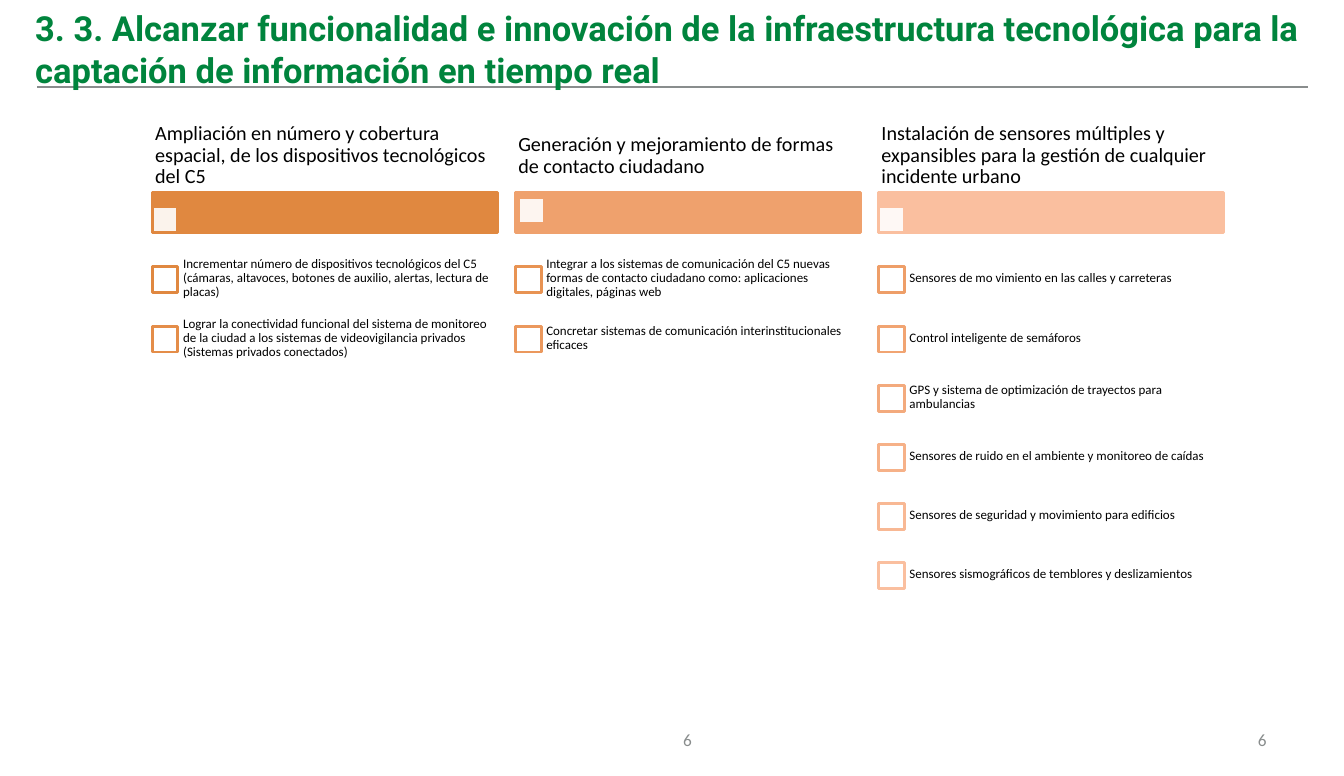
"""Build the slide on the C5 technology infrastructure goals."""
from dataclasses import dataclass

import pptx
import pptx.dml.color
import pptx.enum.shapes
import pptx.enum.text
import pptx.oxml.ns
import pptx.util
from lxml import etree
from pptx.util import Inches


@dataclass(frozen=True)
class Theme:
    """Colours, fonts and type sizes."""
    green: str = "00843D"
    gray: str = "898D8D"
    black: str = "000000"
    white: str = "FFFFFF"
    title_font: str = "Roboto"
    body_font: str = "Calibri"
    title_size: int = 24
    heading_size: int = 14
    item_size: int = 9
    number_size: int = 12


theme = Theme()
ALIGN = pptx.enum.text.PP_ALIGN
ANCHOR = pptx.enum.text.MSO_ANCHOR


def add_text(text, place, size, color=theme.black, font=theme.body_font, bold=False,
             align=ALIGN.LEFT, anchor=ANCHOR.MIDDLE, insets=(0.1, 0.05), spacing=1.0):
    box = slide.shapes.add_textbox(*map(Inches, place))
    frame = box.text_frame
    frame.word_wrap = True
    frame.vertical_anchor = anchor
    frame.margin_left = frame.margin_right = Inches(insets[0])
    frame.margin_top = frame.margin_bottom = Inches(insets[1])
    frame.text = text
    para = frame.paragraphs[0]
    para.alignment = align
    para.line_spacing = spacing
    span = para.runs[0]
    span.font.name = font
    span.font.size = pptx.util.Pt(size)
    span.font.bold = bold
    span.font.color.rgb = pptx.dml.color.RGBColor.from_string(color)


def add_rectangle(place, fill, line, opacity=100):
    shape = slide.shapes.add_shape(pptx.enum.shapes.MSO_SHAPE.RECTANGLE, *map(Inches, place))
    shape.shadow.inherit = False
    shape.fill.solid()
    shape.fill.fore_color.rgb = pptx.dml.color.RGBColor.from_string(fill)
    shape.line.color.rgb = pptx.dml.color.RGBColor.from_string(line)
    shape.line.width = pptx.util.Pt(2)
    if opacity < 100:
        color = shape.fill._xPr.find(".//" + pptx.oxml.ns.qn("a:srgbClr"))
        etree.SubElement(color, pptx.oxml.ns.qn("a:alpha"), val=str(opacity * 1000))


deck = pptx.Presentation()
deck.slide_width, deck.slide_height = Inches(12.99), Inches(7.5)
slide = deck.slides.add_slide(deck.slide_layouts[6])

rule = slide.shapes.add_connector(pptx.enum.shapes.MSO_CONNECTOR.STRAIGHT,
                                  Inches(0.36), Inches(0.84), Inches(12.64), Inches(0.84))
rule.line.color.rgb = pptx.dml.color.RGBColor.from_string(theme.gray)
rule.line.width = pptx.util.Pt(1.5)
etree.SubElement(rule._element.spPr, pptx.oxml.ns.qn("a:effectLst"))

add_text("3. 3. Alcanzar funcionalidad e innovación de la infraestructura tecnológica para la "
         "captación de información en tiempo real", (0.21, 0, 12.78, 0.94), theme.title_size,
         theme.green, theme.title_font, bold=True, anchor=ANCHOR.TOP, insets=(0.13, 0.07))

for place, align in (((9.31, 6.95, 3.03, 0.4), ALIGN.RIGHT),
                     ((5.09, 6.95, 3.11, 0.4), ALIGN.CENTER)):
    add_text("6", place, theme.number_size, theme.gray, align=align)

columns = [
    ("Ampliación en número y cobertura espacial, de los dispositivos tecnológicos del C5",
     "E08840", (0, 2), [
         ("E08840", "Incrementar número de dispositivos tecnológicos del C5 (cámaras, altavoces, "
                    "botones de auxilio, alertas, lectura de placas)"),
         ("E48D49", "Lograr la conectividad funcional del sistema de monitoreo de la ciudad a los "
                    "sistemas de videovigilancia privados (Sistemas privados conectados)"),
     ]),
    ("Generación y mejoramiento de formas de contacto ciudadano",
     "EFA16D", (0.03, 1.91), [
         ("E89353", "Integrar a los sistemas de comunicación del C5 nuevas formas de contacto "
                    "ciudadano como: aplicaciones digitales, páginas web"),
         ("EB985D", "Concretar sistemas de comunicación interinstitucionales eficaces"),
     ]),
    ("Instalación de sensores múltiples y expansibles para la gestión de cualquier incidente "
     "urbano", "FABF9F", (0, 2), [
         ("EE9E68", "Sensores de mo vimiento en las calles y carreteras"),
         ("F1A472", "Control inteligente de semáforos"),
         ("F3AA7D", "GPS y sistema de optimización de trayectos para ambulancias"),
         ("F6B188", "Sensores de ruido en el ambiente y monitoreo de caídas"),
         ("F8B894", "Sensores de seguridad y movimiento para edificios"),
         ("FABF9F", "Sensores sismográficos de temblores y deslizamientos"),
     ]),
]
column_pitch, column_width, row_pitch, square = 3.51, 3.34, 0.572, 0.25

for column, (heading, bar_color, (marker_shift, marker_top), items) in enumerate(columns):
    left = 1.47 + column * column_pitch
    add_rectangle((left, 1.86, column_width, 0.39), bar_color, bar_color)
    add_rectangle((left + marker_shift, marker_top, square, square),
                  theme.white, bar_color, opacity=90)
    add_text(heading, (left, 1.15, column_width, 0.71), theme.heading_size,
             insets=(0.03, 0.02), spacing=0.9)
    for row, (line_color, item) in enumerate(items):
        top = 2.41 + row * row_pitch
        add_rectangle((left, top + 0.17, square, square), theme.white, line_color)
        add_text(item, (left + 0.23, top, 3.11, 0.57), theme.item_size,
                 insets=(0.07, 0.07), spacing=0.9)

deck.save("out.pptx")
